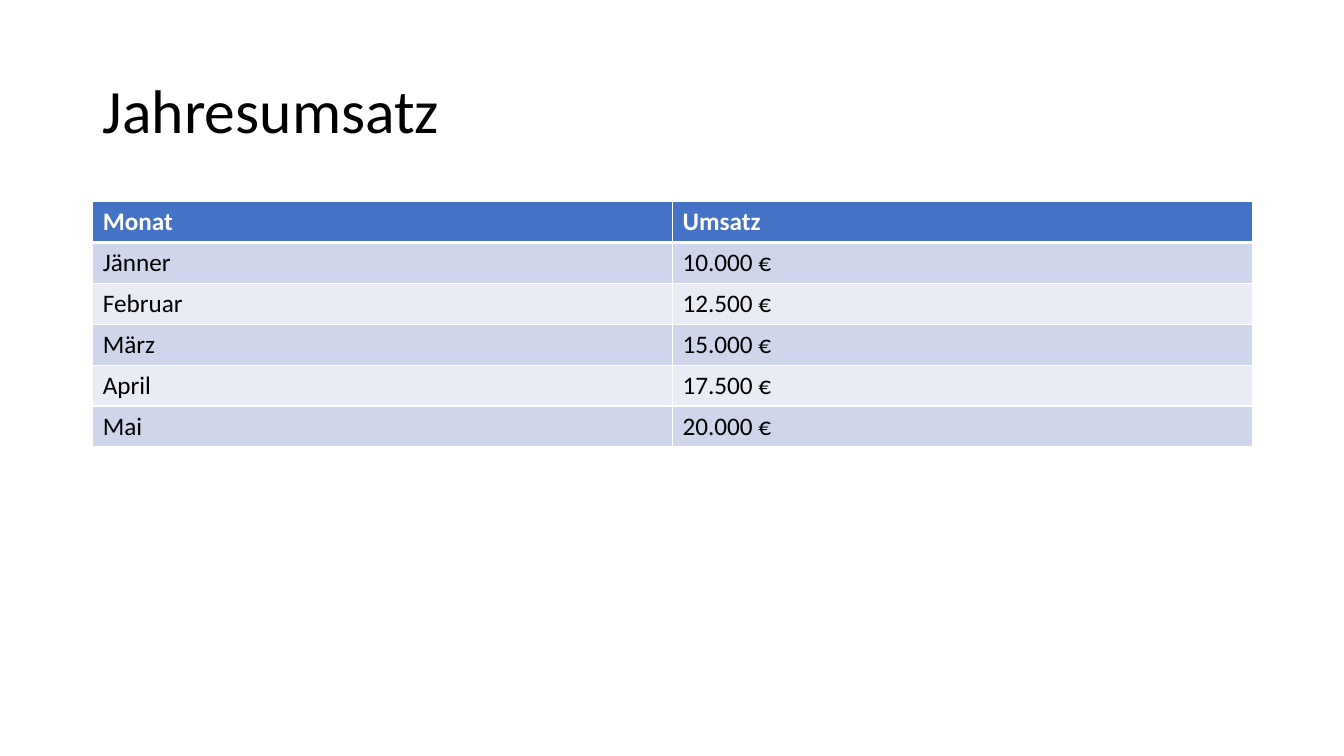
from lxml.etree import SubElement
from pptx import Presentation
from pptx.dml.color import RGBColor
from pptx.enum.text import MSO_ANCHOR, MSO_AUTO_SIZE, PP_ALIGN
from pptx.oxml.ns import qn
from pptx.util import Inches, Pt

FONT = "Calibri"
WHITE = RGBColor(0xFF, 0xFF, 0xFF)
BLACK = RGBColor(0x00, 0x00, 0x00)
HEADER_BLUE = RGBColor(0x44, 0x72, 0xC4)
BAND_DARK = RGBColor(0xCF, 0xD5, 0xEA)
BAND_LIGHT = RGBColor(0xE9, 0xEB, 0xF5)

REVENUE = [
    ("Monat", "Umsatz"),
    ("Jänner", "10.000 €"),
    ("Februar", "12.500 €"),
    ("März", "15.000 €"),
    ("April", "17.500 €"),
    ("Mai", "20.000 €"),
]


def add_run(paragraph, text, size, color, bold=False):
    run = paragraph.add_run()
    run.text = text
    run.font.name = FONT
    run.font.size = Pt(size)
    run.font.color.rgb = color
    run.font.bold = bold


def set_borders(cell, top, bottom):
    """Draw white cell edges; top and bottom widths are in points."""
    properties = cell._tc.get_or_add_tcPr()
    for edge, width in (("L", 1), ("R", 1), ("T", top), ("B", bottom)):
        line = SubElement(properties, qn(f"a:ln{edge}"), w=str(Pt(width)))
        fill = SubElement(line, qn("a:solidFill"))
        SubElement(fill, qn("a:srgbClr"), val=str(WHITE))


def place_title(slide, text, left, top, width, height):
    title = slide.shapes.title
    title.left, title.top = Inches(left), Inches(top)
    title.width, title.height = Inches(width), Inches(height)
    frame = title.text_frame
    frame.word_wrap = True
    frame.auto_size = MSO_AUTO_SIZE.NONE
    frame.vertical_anchor = MSO_ANCHOR.MIDDLE
    heading = frame.paragraphs[0]
    heading.alignment = PP_ALIGN.LEFT
    heading.line_spacing = 0.9
    add_run(heading, text, 44, BLACK)


def place_table(slide, records, left, top, width, height):
    table = slide.shapes.add_table(
        len(records), len(records[0]),
        Inches(left), Inches(top), Inches(width), Inches(height),
    ).table
    for row, record in enumerate(records):
        is_header = row == 0
        band = BAND_DARK if row % 2 else BAND_LIGHT
        for column, text in enumerate(record):
            cell = table.cell(row, column)
            # The rule below the header is thicker than the others
            set_borders(cell, top=3 if row == 1 else 1, bottom=3 if is_header else 1)
            cell.fill.solid()
            cell.fill.fore_color.rgb = HEADER_BLUE if is_header else band
            add_run(cell.text_frame.paragraphs[0], text, 18,
                    WHITE if is_header else BLACK, bold=is_header)


def main():
    deck = Presentation()
    deck.slide_width, deck.slide_height = Inches(13.33), Inches(7.5)
    title_only = deck.slide_layouts[5]
    slide = deck.slides.add_slide(title_only)

    # Heading
    place_title(slide, "Jahresumsatz", 0.92, 0.4, 11.5, 1.45)
    # Monthly revenue
    place_table(slide, REVENUE, 0.92, 2, 11.5, 2.43)

    deck.save("out.pptx")


if __name__ == "__main__":
    main()
